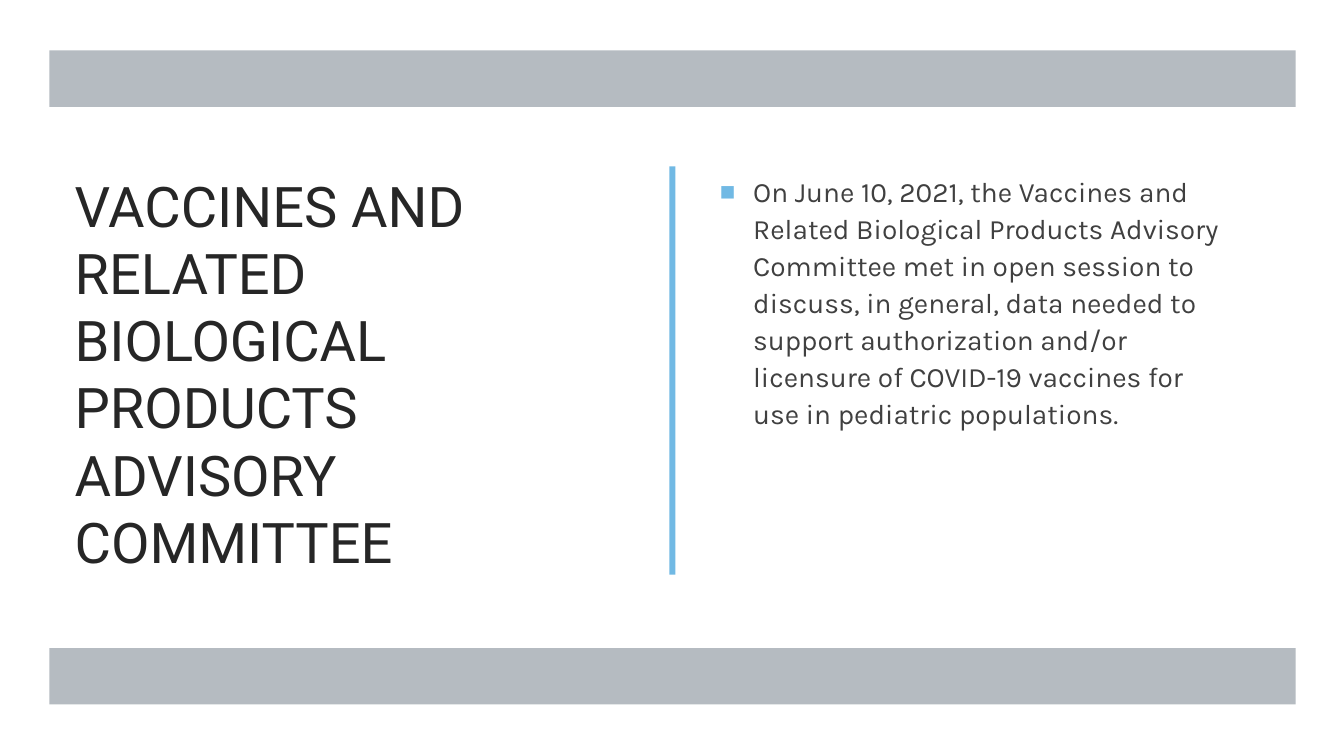
from lxml import etree
from pptx import Presentation
from pptx import util as u
from pptx.dml.color import RGBColor
from pptx.enum import shapes, text
from pptx.oxml.ns import qn


class Deck:
    hues = {"page": "FFFFFF", "band": "969FA7", "rule": "71B9E4",
            "title": "262626", "body": "404040"}

    def __init__(self):
        self.deck = Presentation()
        self.deck.slide_width = u.Inches(13.33)
        self.deck.slide_height = u.Inches(7.5)
        self.slide = self.deck.slides.add_slide(self.deck.slide_layouts[1])
        fill = self.slide.background.fill
        fill.solid()
        fill.fore_color.rgb = self.hue("page")

    def hue(self, name):
        return RGBColor.from_string(self.hues[name])

    def apply(self, item, style):
        for key, value in style.items():
            setattr(item, key, value)

    def place(self, item, box):
        sides = ("left", "top", "width", "height")
        self.apply(item, dict(zip(sides, map(u.Inches, box))))

    def bar(self, box, hue, alpha=100):
        bar = self.slide.shapes.add_shape(
            shapes.MSO_SHAPE.RECTANGLE, *map(u.Inches, box))
        bar.shadow.inherit = False
        bar.line.fill.background()
        bar.fill.solid()
        bar.fill.fore_color.rgb = self.hue(hue)
        if alpha < 100:
            tint = bar._element.spPr.find(".//" + qn("a:srgbClr"))
            etree.SubElement(tint, qn("a:alpha"), val=str(alpha * 1000))

    def label(self, index, box, words, hue, font, style):
        holder = self.slide.placeholders[index]
        self.place(holder, box)
        frame = holder.text_frame
        frame.text = words
        self.apply(frame, {"word_wrap": True,
                           "auto_size": text.MSO_AUTO_SIZE.NONE,
                           "vertical_anchor": text.MSO_ANCHOR.TOP})
        para = frame.paragraphs[0]
        self.apply(para, {"alignment": text.PP_ALIGN.LEFT, **style})
        run = para.runs[0]
        self.apply(run.font, font)
        run.font.color.rgb = self.hue(hue)
        return para

    def bullet(self, para, hue, size, mark, indent):
        props = para._p.get_or_add_pPr()
        step = u.Inches(indent)
        props.set("marL", str(step))
        props.set("indent", str(-step))
        tint = etree.SubElement(props, qn("a:buClr"))
        etree.SubElement(tint, qn("a:srgbClr"), val=self.hues[hue])
        etree.SubElement(props, qn("a:buSzPct"), val=str(size * 1000))
        etree.SubElement(props, qn("a:buFont"), typeface="Arial")
        etree.SubElement(props, qn("a:buChar"), char=mark)


def main():
    deck = Deck()
    for top in (0.5, 6.43):
        deck.bar((0.49, top, 12.36, 0.56), "band", 70)
    deck.bar((6.64, 1.65, 0.06, 4.05), "rule")
    deck.label(
        0, (0.64, 1.65, 5.6, 4.27),
        "VACCINES AND RELATED BIOLOGICAL PRODUCTS ADVISORY COMMITTEE",
        "title", {"name": "Roboto", "size": u.Pt(40)}, {"line_spacing": 1.0})
    para = deck.label(
        1, (7.04, 1.65, 5.27, 4.27),
        "On June 10, 2021, the Vaccines and Related Biological Products "
        "Advisory Committee met in open session to discuss, in general, data "
        "needed to support authorization and/or licensure of COVID-19 "
        "vaccines for use in pediatric populations.",
        "body", {"name": "Karla", "size": u.Pt(20)},
        {"line_spacing": 1.1, "space_before": u.Pt(4),
         "space_after": u.Pt(6)})
    deck.bullet(para, "rule", 92, "■", 0.33)
    deck.deck.save("out.pptx")


if __name__ == "__main__":
    main()
